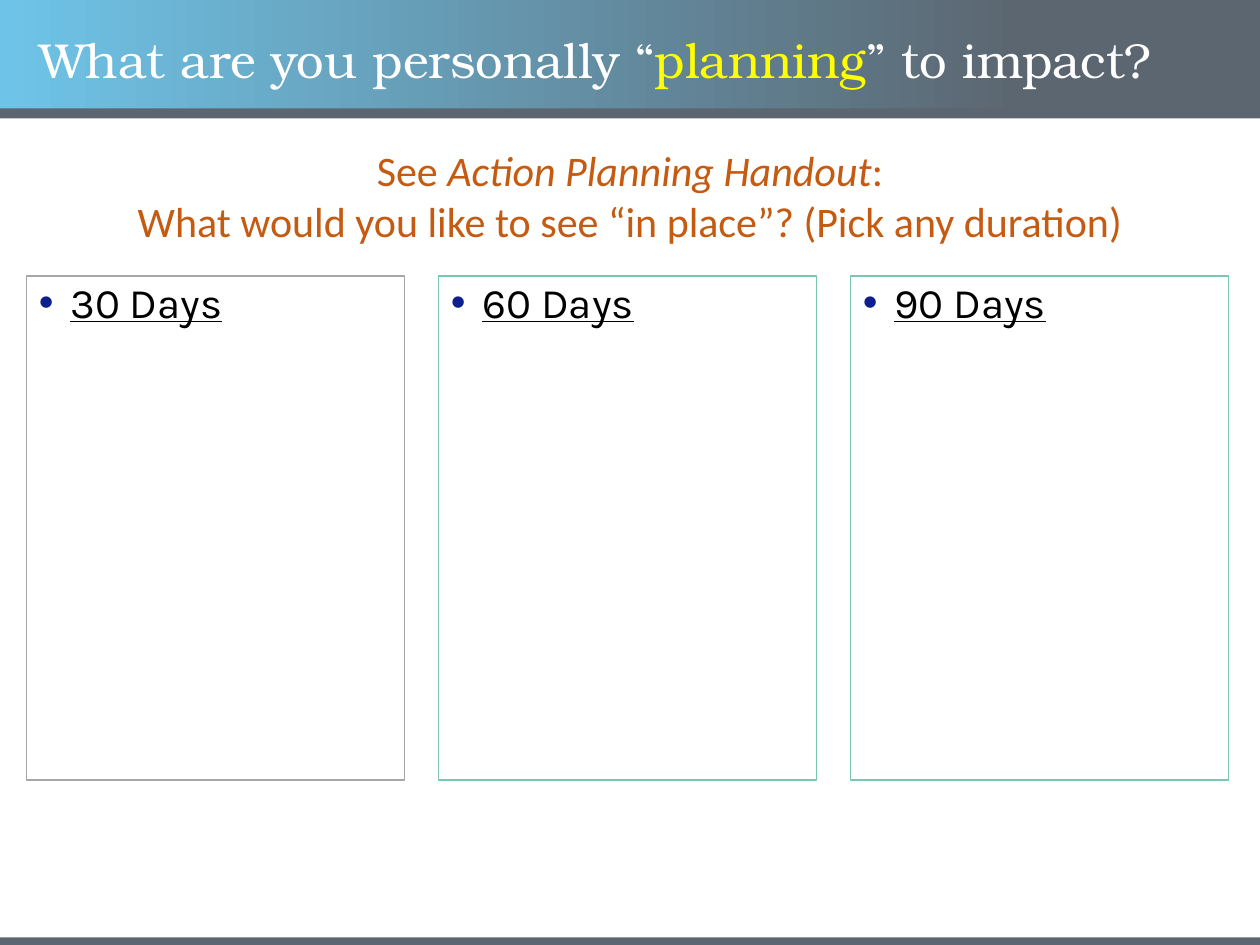
import pptx
import pptx.util
import pptx.dml.color
import pptx.enum.shapes
import pptx.enum.text
import pptx.oxml
import pptx.oxml.ns
from pptx.util import Inches

RGBColor = pptx.dml.color.RGBColor
SKY = RGBColor(0x6E, 0xC4, 0xE8)
SLATE = RGBColor(0x5C, 0x66, 0x70)
WHITE = RGBColor(0xFF, 0xFF, 0xFF)
YELLOW = RGBColor(0xFF, 0xFF, 0x00)
BLACK = RGBColor(0x00, 0x00, 0x00)
ORANGE = RGBColor(0xC5, 0x5A, 0x11)
NAVY = RGBColor(0x0D, 0x1E, 0x8E)
GRAY = RGBColor(0xA6, 0xA6, 0xA6)
TEAL = RGBColor(0x79, 0xC7, 0xAF)

ALIGN = pptx.enum.text.PP_ALIGN
ANCHOR = pptx.enum.text.MSO_ANCHOR


def add_run(paragraph, text, *, font, size, color, italic=None, underline=None):
    run = paragraph.add_run()
    run.text = text
    run.font.name = font
    run.font.size = pptx.util.Pt(size)
    run.font.color.rgb = color
    run.font.italic = italic
    run.font.underline = underline


def add_rectangle(slide, left, top, width, height):
    rectangle = slide.shapes.add_shape(
        pptx.enum.shapes.MSO_SHAPE.RECTANGLE,
        Inches(left), Inches(top), Inches(width), Inches(height))
    rectangle.shadow.inherit = False
    return rectangle


def add_bar(slide, top, height, end_color=None):
    bar = add_rectangle(slide, 0, top, 10, height)
    bar.line.fill.background()
    if end_color is None:
        bar.fill.solid()
        bar.fill.fore_color.rgb = SLATE
        return
    bar.fill.gradient()
    bar.fill.gradient_angle = 0
    start, end = bar.fill.gradient_stops
    start.position, start.color.rgb = 0, SKY
    end.position, end.color.rgb = 0.81, end_color


def format_title(slide):
    title = slide.shapes.title
    title.left, title.top = Inches(0.21), Inches(0.21)
    title.width, title.height = Inches(9.79), Inches(0.57)
    frame = title.text_frame
    frame.auto_size = pptx.enum.text.MSO_AUTO_SIZE.NONE
    frame.word_wrap = True
    frame.vertical_anchor = ANCHOR.MIDDLE
    heading = frame.paragraphs[0]
    heading.alignment = ALIGN.LEFT
    heading.line_spacing = 0.9
    for text, color in (("What are you personally “", WHITE),
                        ("planning", YELLOW),
                        ("” to impact?", WHITE)):
        add_run(heading, text, font="TeX Gyre Bonum", size=28, color=color)
    title._element.getparent().append(title._element)


def add_bullet(paragraph, color):
    properties = paragraph._p.get_or_add_pPr()
    properties.set("marL", str(Inches(0.25)))
    properties.set("indent", str(-Inches(0.25)))
    namespace = pptx.oxml.ns.nsdecls("a")
    for xml in (f'<a:buClr {namespace}><a:srgbClr val="{color}"/></a:buClr>',
                f'<a:buFont {namespace} typeface="Arial"/>',
                f'<a:buChar {namespace} char="•"/>'):
        properties.append(pptx.oxml.parse_xml(xml))


def add_duration_box(slide, left, label, border):
    box = add_rectangle(slide, left, 2.19, 3, 4)
    box.fill.background()
    box.line.color.rgb = border
    box.line.width = pptx.util.Pt(0.75)
    frame = box.text_frame
    frame.word_wrap = True
    frame.vertical_anchor = ANCHOR.TOP
    item = frame.paragraphs[0]
    add_bullet(item, NAVY)
    item.alignment = ALIGN.LEFT
    item.line_spacing = 0.9
    add_run(item, label, font="Karla", size=24, color=BLACK, underline=True)


def add_instructions(slide):
    instructions = slide.shapes.add_textbox(
        Inches(0), Inches(1.1), Inches(10), Inches(0.91))
    frame = instructions.text_frame
    frame.word_wrap = True
    handout, question = frame.paragraphs[0], frame.add_paragraph()
    for paragraph, text, italic in (
            (handout, "See ", False),
            (handout, "Action Planning Handout", True),
            (handout, ":", False),
            (question, "What would you like to see “in place”? (Pick any duration)", False)):
        paragraph.alignment = ALIGN.CENTER
        add_run(paragraph, text, font="Calibri", size=24, color=ORANGE, italic=italic)


def main():
    presentation = pptx.Presentation()
    presentation.slide_width = Inches(10)
    presentation.slide_height = Inches(7.5)
    slide = presentation.slides.add_slide(presentation.slide_layouts[5])

    add_bar(slide, 0, 0.87, end_color=SLATE)
    for top in (0.86, 7.44):
        add_bar(slide, top, 0.08)
    format_title(slide)
    for column, (days, border) in enumerate(((30, GRAY), (60, TEAL), (90, TEAL))):
        add_duration_box(slide, 0.21 + 3.27 * column, f"{days} Days", border)
    add_instructions(slide)

    presentation.save("out.pptx")


if __name__ == "__main__":
    main()
